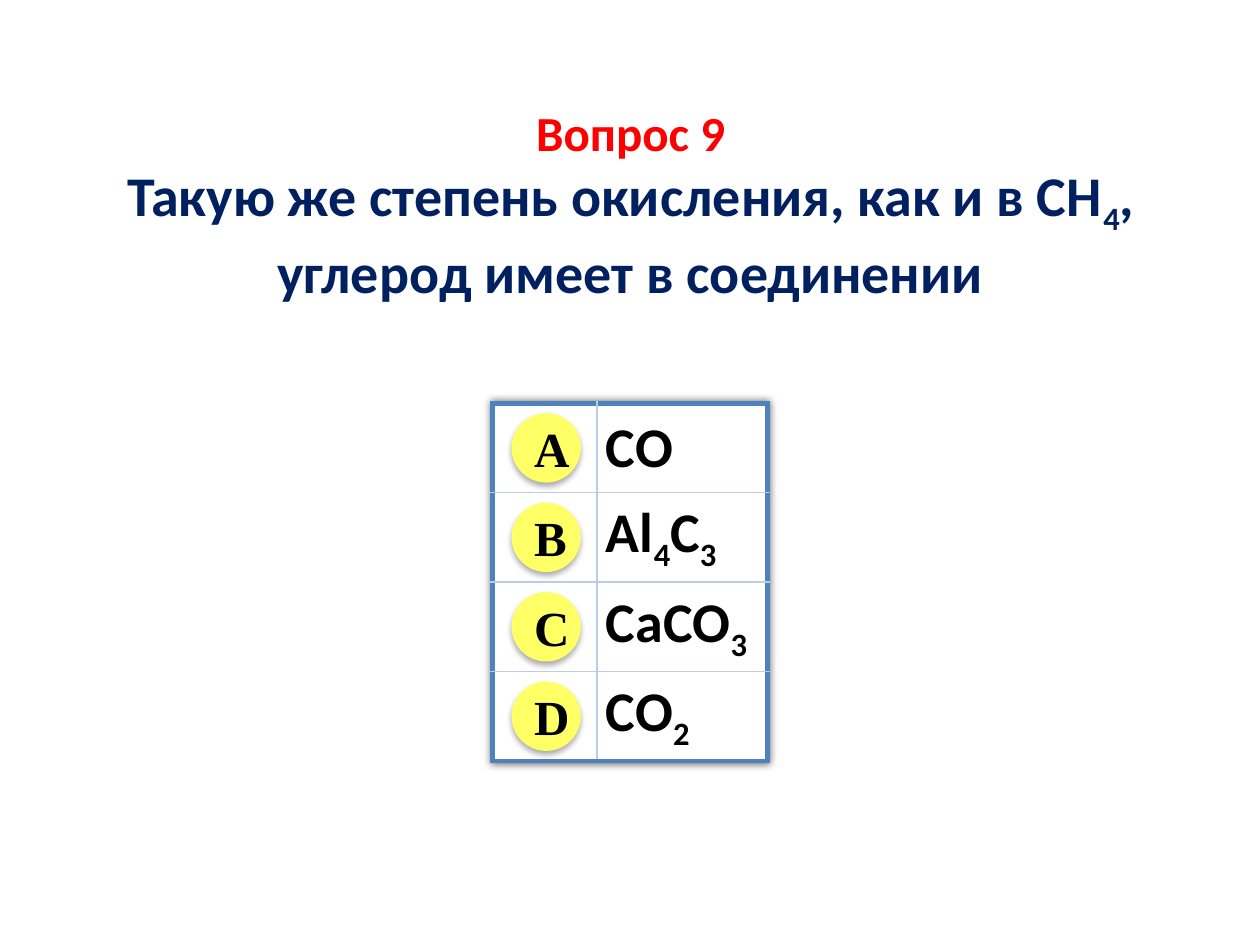
from lxml import etree
from pptx import Presentation
from pptx.dml.color import RGBColor
from pptx.enum.shapes import MSO_SHAPE
from pptx.enum.text import MSO_ANCHOR, MSO_AUTO_SIZE, PP_ALIGN
from pptx.oxml import parse_xml
from pptx.oxml.ns import nsdecls, qn
from pptx.util import Inches, Pt

OVAL = MSO_SHAPE.OVAL
TOP, MIDDLE = MSO_ANCHOR.TOP, MSO_ANCHOR.MIDDLE
CENTER = PP_ALIGN.CENTER
NO_AUTOFIT = MSO_AUTO_SIZE.NONE

THEME = {
    "white": RGBColor.from_string("FFFFFF"),
    "badge": RGBColor.from_string("FFFF66"),
    "frame": "4F81BD",
    "grid": "B9CDE5",
    "number": {"name": "Calibri", "size": Pt(28), "bold": True,
               "color": RGBColor.from_string("FF0000")},
    "question": {"name": "Calibri", "size": Pt(32), "bold": True,
                 "color": RGBColor.from_string("002060")},
    "answer": {"name": "Calibri", "size": Pt(32), "bold": True,
               "color": RGBColor.from_string("000000")},
    "letter": {"name": "Times New Roman", "size": Pt(28), "bold": True,
               "color": RGBColor.from_string("000000")},
}


def write(paragraph, text, style):
    """Add text to a paragraph; every second part between underscores is a subscript."""
    for index, part in enumerate(text.split("_")):
        if not part:
            continue
        run = paragraph.add_run()
        run.text = part
        for name, value in style.items():
            if name == "color":
                run.font.color.rgb = value
            else:
                setattr(run.font, name, value)
        if index % 2:
            run._r.get_or_add_rPr().set("baseline", "-25000")


def add_shadow(properties, position, blur, distance, alpha):
    """Insert a downward black shadow; alpha is in percent."""
    properties.insert(position, parse_xml(
        f'<a:effectLst {nsdecls("a")}>'
        f'<a:outerShdw blurRad="{Pt(blur)}" dist="{Pt(distance)}" dir="5400000" rotWithShape="0">'
        f'<a:srgbClr val="000000"><a:alpha val="{alpha * 1000}"/></a:srgbClr>'
        '</a:outerShdw></a:effectLst>'))


prs = Presentation()
prs.slide_width, prs.slide_height = Inches(10), Inches(7.5)
slide = prs.slides.add_slide(prs.slide_layouts[5])

# Question
question = slide.shapes.title
question.left, question.top = Inches(0.24), Inches(0.76)
question.width, question.height = Inches(9.53), Inches(1.65)
question.fill.solid()
question.fill.fore_color.rgb = THEME["white"]
question_frame = question.text_frame
question_frame.word_wrap = True
question_frame.auto_size = NO_AUTOFIT
question_frame.vertical_anchor = TOP
number_line = question_frame.paragraphs[0]
question_line = question_frame.add_paragraph()
write(number_line, "Вопрос 9", THEME["number"])
write(question_line, "Такую же степень окисления, как и в CH_4_, углерод имеет в соединении",
      THEME["question"])
for line in (number_line, question_line):
    line.alignment = CENTER

# Answer table
answers = {"A": "CO", "B": "Al_4_C_3_", "C": "CaCO_3_", "D": "CO_2_"}
column_widths = [0.83, 1.35]
row_height = 0.71
table_left, table_top = 3.91, 3.2
last_row, last_column = len(answers) - 1, len(column_widths) - 1
answer_table = slide.shapes.add_table(
    len(answers), len(column_widths), Inches(table_left), Inches(table_top),
    Inches(sum(column_widths)), Inches(row_height * len(answers))).table
answer_table.first_row = answer_table.horz_banding = False
add_shadow(answer_table._tbl.tblPr, 0, blur=5, distance=0, alpha=60)
for column, width in zip(answer_table.columns, column_widths):
    column.width = Inches(width)

for row, formula in enumerate(answers.values()):
    answer_table.rows[row].height = Inches(row_height)
    for column in range(len(column_widths)):
        cell = answer_table.cell(row, column)
        cell.fill.solid()
        cell.fill.fore_color.rgb = THEME["white"]
        cell.vertical_anchor = MIDDLE
        cell.margin_left = cell.margin_right = Inches(0.07)
        cell.margin_top = cell.margin_bottom = 0
        on_frame = {"lnL": column == 0, "lnR": column == last_column,
                    "lnT": row == 0, "lnB": row == last_row}
        for position, (side, outer) in enumerate(on_frame.items()):
            border = etree.Element(qn(f"a:{side}"), w=str(Pt(3 if outer else 1)))
            fill = etree.SubElement(border, qn("a:solidFill"))
            etree.SubElement(fill, qn("a:srgbClr"), val=THEME["frame" if outer else "grid"])
            cell._tc.get_or_add_tcPr().insert(position, border)
    write(answer_table.cell(row, last_column).text_frame.paragraphs[0], formula, THEME["answer"])

# Letter badges, one in each row
badge_size = 0.55
for row, letter in enumerate(answers):
    badge = slide.shapes.add_shape(
        OVAL, Inches(4.06), Inches(table_top + 0.08 + row * row_height),
        Inches(badge_size), Inches(badge_size))
    badge.fill.solid()
    badge.fill.fore_color.rgb = THEME["badge"]
    badge.line.fill.background()
    badge_properties = badge._element.spPr
    add_shadow(badge_properties, len(badge_properties), blur=3.5, distance=2.2, alpha=32)
    badge.text_frame.vertical_anchor = MIDDLE
    letter_line = badge.text_frame.paragraphs[0]
    letter_line.alignment = CENTER
    write(letter_line, letter, THEME["letter"])

prs.save("out.pptx")
